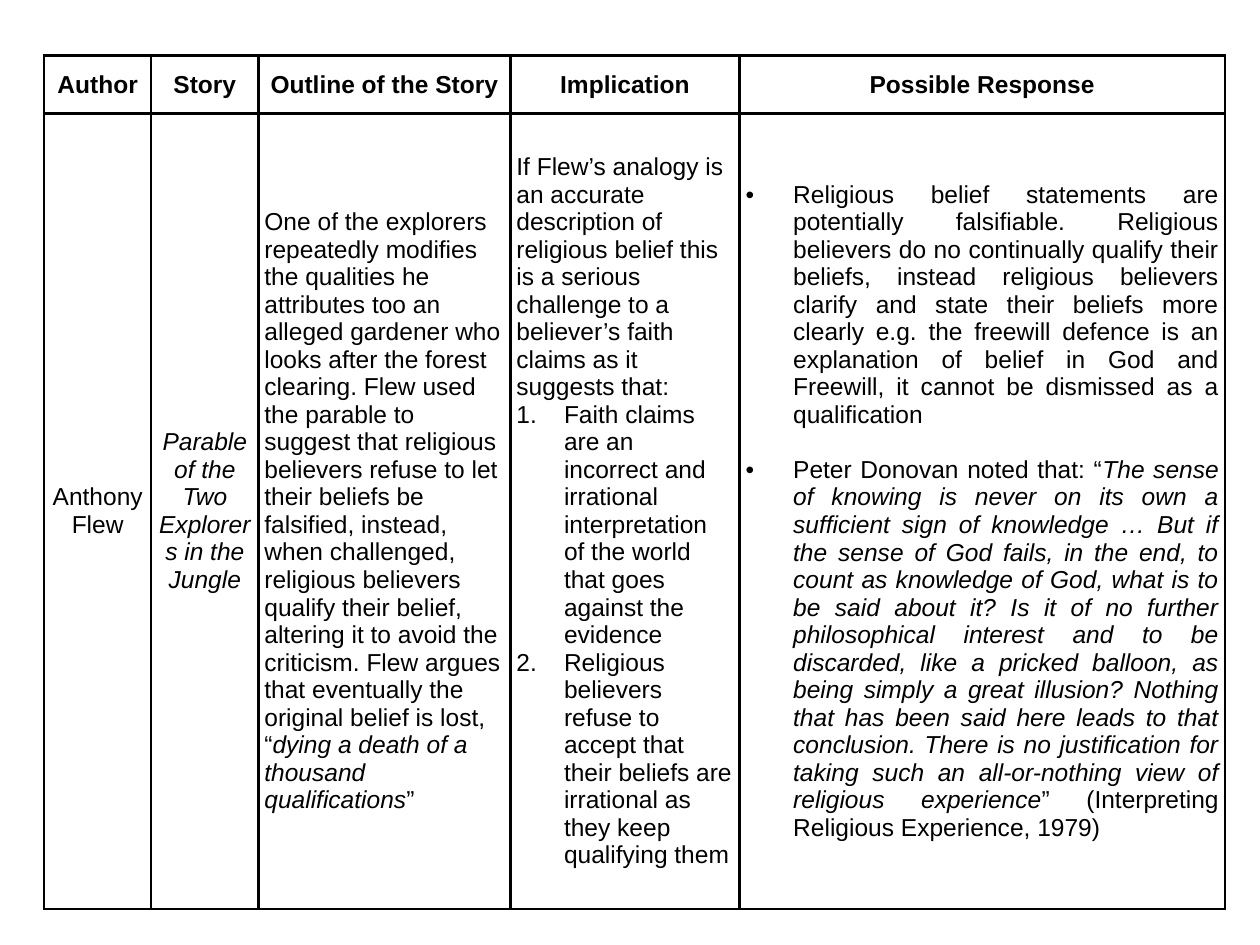
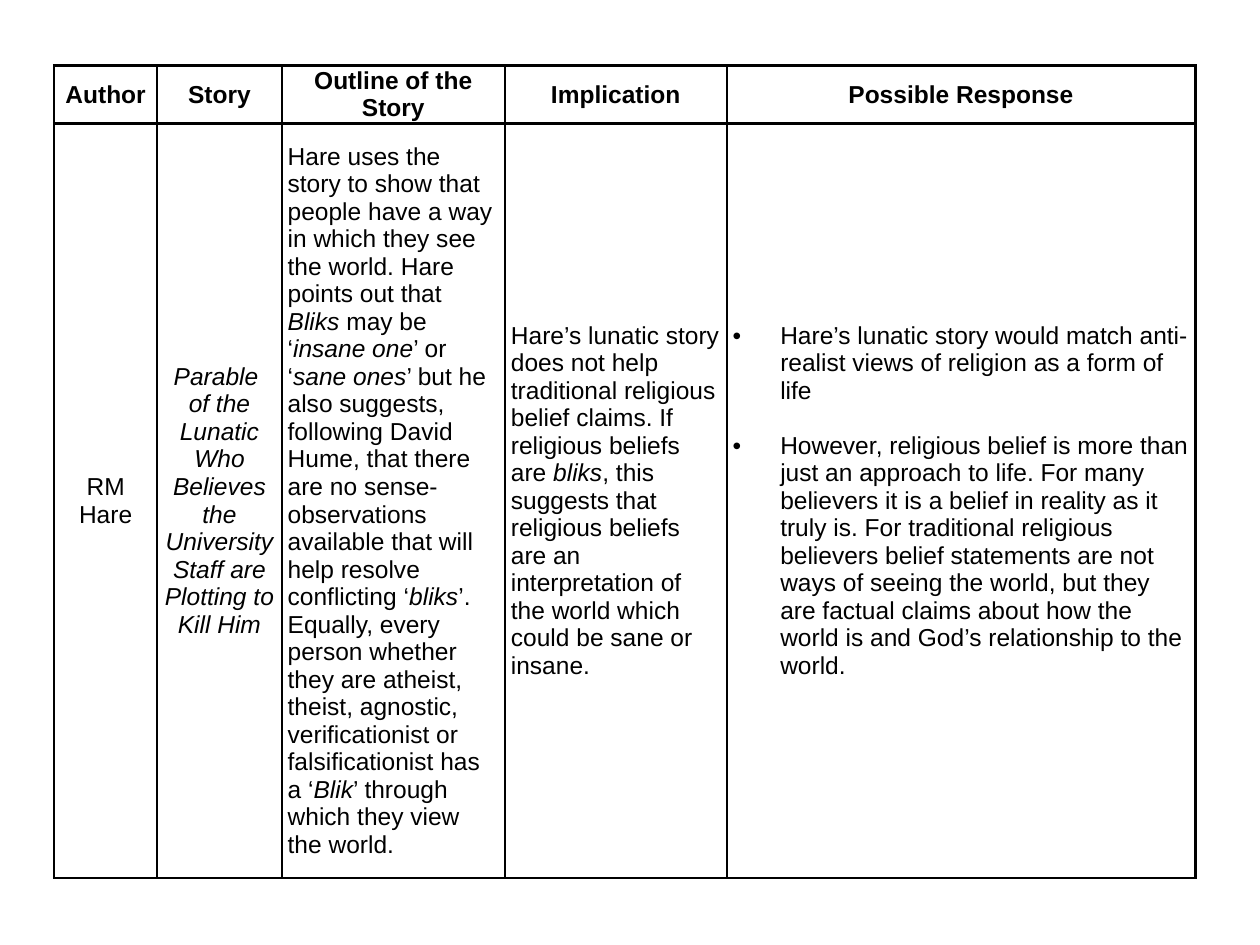
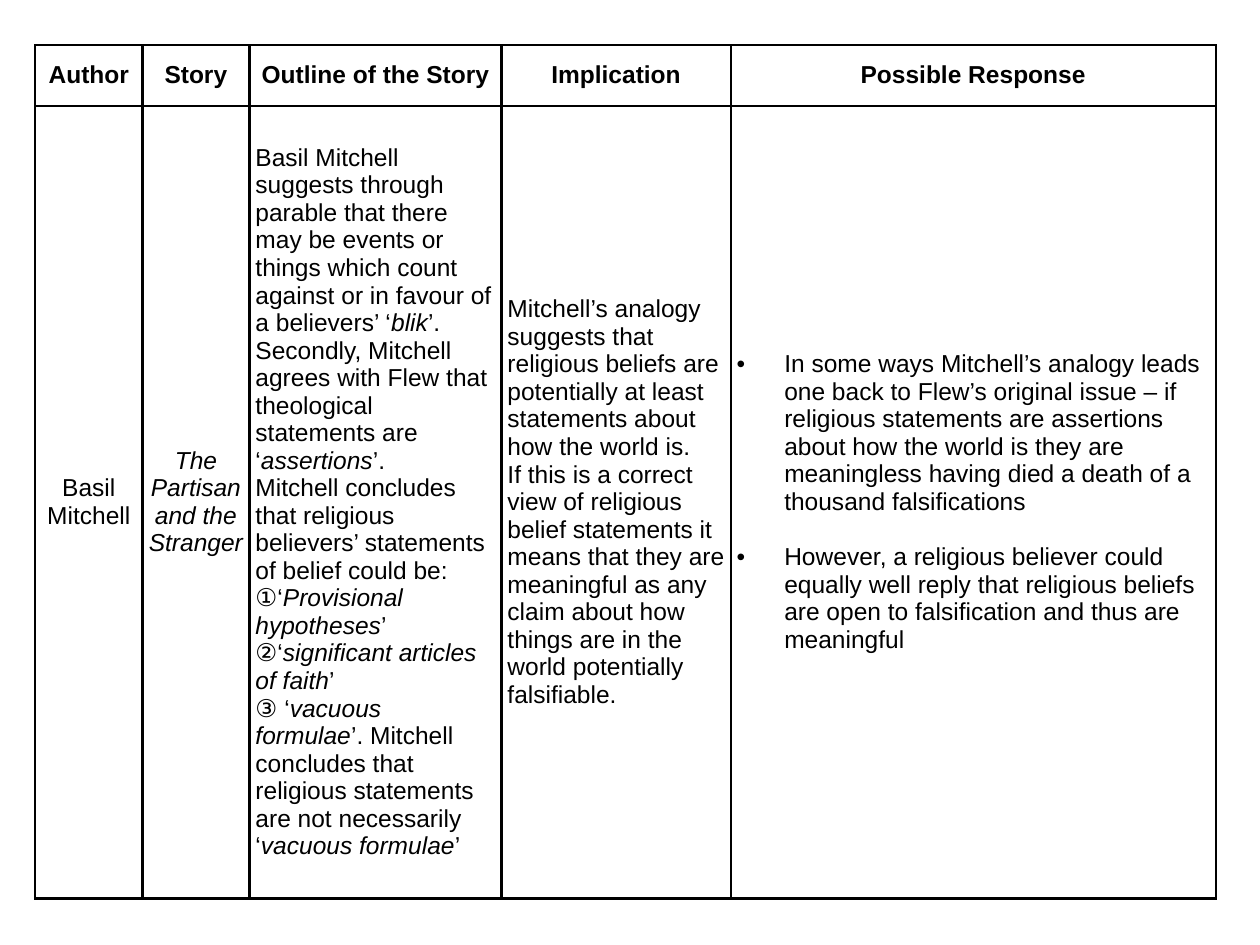
from lxml import etree
from pptx import Presentation
from pptx.dml.color import RGBColor
from pptx.enum import text as t
from pptx.oxml import ns
from pptx.util import Cm, Pt

BLACK = RGBColor(0x00, 0x00, 0x00)
FONT, SIZE = "Arial", Pt(14)
BORDER = Pt(1.5)
INSET = Cm(0.12)
HANGING = Cm(0.96)
ENTRY_GAP = Pt(15.75)
LEFT, CENTER, JUSTIFY = t.PP_ALIGN.LEFT, t.PP_ALIGN.CENTER, t.PP_ALIGN.JUSTIFY

HEADINGS = ["Author", "Story", "Outline of the Story", "Implication", "Possible Response"]
WIDE_COLUMNS = [2.16, 2.16, 5.08, 4.62, 9.78]
NARROW_COLUMNS = [2.08, 2.51, 4.5, 4.47, 9.45]

# Asterisks enclose italics; "1. ", "• ", "① " and "② " open list entries.
PARABLES = [
    dict(
        corner=(0.89, 1.12), columns=WIDE_COLUMNS, rows=(1.17, 16.03), response_align=JUSTIFY,
        author=["Anthony Flew"],
        story=["*Parable of the Two Explorers in the Jungle*"],
        outline=[
            "One of the explorers repeatedly modifies the qualities he attributes too an alleged "
            "gardener who looks after the forest clearing. Flew used the parable to suggest that "
            "religious believers refuse to let their beliefs be falsified, instead, when "
            "challenged, religious believers qualify their belief, altering it to avoid the "
            "criticism. Flew argues that eventually the original belief is lost, “*dying a death "
            "of a thousand qualifications*”"],
        implication=[
            "If Flew’s analogy is an accurate description of religious belief this is a serious "
            "challenge to a believer’s faith claims as it suggests that:",
            "1. Faith claims are an incorrect and irrational interpretation of the world that "
            "goes against the evidence",
            "1. Religious believers refuse to accept that their beliefs are irrational as they "
            "keep qualifying them"],
        response=[
            "• Religious belief statements are potentially falsifiable. Religious believers do no "
            "continually qualify their beliefs, instead religious believers clarify and state "
            "their beliefs more clearly e.g. the freewill defence is an explanation of belief in "
            "God and Freewill, it cannot be dismissed as a qualification",
            "• Peter Donovan noted that: “*The sense of knowing is never on its own a sufficient "
            "sign of knowledge … But if the sense of God fails, in the end, to count as knowledge "
            "of God, what is to be said about it? Is it of no further philosophical interest and "
            "to be discarded, like a pricked balloon, as being simply a great illusion? Nothing "
            "that has been said here leads to that conclusion. There is no justification for "
            "taking such an all-or-nothing view of religious experience*” (Interpreting Religious "
            "Experience, 1979)"]),
    dict(
        corner=(1.09, 1.32), columns=NARROW_COLUMNS, rows=(1.17, 15.21), response_align=LEFT,
        author=["RM Hare"],
        story=[
            "*Parable *",
            "*of the Lunatic Who Believes the University Staff are Plotting to Kill Him*"],
        outline=[
            "Hare uses the story to show that people have a way in which they see the world. Hare "
            "points out that *Bliks* may be ‘*insane one*’ or ‘*sane ones*’ but he also suggests, "
            "following David Hume, that there are no sense-observations available that will help "
            "resolve conflicting ‘*bliks*’. Equally, every person whether they are atheist, "
            "theist, agnostic, verificationist or falsificationist has a ‘*Blik*’ through which "
            "they view the world."],
        implication=[
            "Hare’s lunatic story does not help traditional religious belief claims. If religious "
            "beliefs are *bliks*, this suggests that religious beliefs are an interpretation of "
            "the world which could be sane or insane."],
        response=[
            "• Hare’s lunatic story would match anti-realist views of religion as a form of life",
            "• However, religious belief is more than just an approach to life. For many "
            "believers it is a belief in reality as it truly is. For traditional religious "
            "believers belief statements are not ways of seeing the world, but they are factual "
            "claims about how the world is and God’s relationship to the world."]),
    dict(
        corner=(0.71, 0.91), columns=WIDE_COLUMNS, rows=(1.22, 15.98), response_align=LEFT,
        author=["Basil Mitchell"],
        story=["*The Partisan and the Stranger*"],
        outline=[
            "Basil Mitchell suggests through parable that there may be events or things which "
            "count against or in favour of a believers’ ‘*blik*’. Secondly, Mitchell agrees with "
            "Flew that theological statements are ‘*assertions*’.",
            "Mitchell concludes that religious believers’ statements of belief could be:",
            "① ‘*Provisional hypotheses*’",
            "② ‘*significant articles of faith*’",
            "③ ‘*vacuous formulae*’. Mitchell concludes that religious statements are not "
            "necessarily ‘*vacuous formulae*’"],
        implication=[
            "Mitchell’s analogy suggests that religious beliefs are potentially at least "
            "statements about how the world is.",
            "If this is a correct view of religious belief statements it means that they are "
            "meaningful as any claim about how things are in the world potentially falsifiable."],
        response=[
            "• In some ways Mitchell’s analogy leads one back to Flew’s original issue – if "
            "religious statements are assertions about how the world is they are meaningless "
            "having died a death of a thousand falsifications",
            "• However, a religious believer could equally well reply that religious beliefs are "
            "open to falsification and thus are meaningful"]),
]


def add_child(parent, tag, **attributes):
    return etree.SubElement(parent, ns.qn(tag), {k: str(v) for k, v in attributes.items()})


def mark_entry(paragraph, marker):
    """Give the paragraph its list marker and indent."""
    properties = paragraph._p.get_or_add_pPr()
    indent = HANGING if marker in ("1.", "•") else 0
    properties.set("marL", str(int(indent)))
    properties.set("indent", str(-int(indent)))
    if marker == "1.":
        add_child(properties, "a:buFont", typeface="+mj-lt")
        add_child(properties, "a:buAutoNum", type="arabicPeriod")
    else:
        add_child(properties, "a:buFont", typeface=FONT)
        add_child(properties, "a:buChar", char=marker)


def write(cell, entries, align=LEFT, bold=False, gap=0):
    """Fill a cell with paragraphs, reading list markers and italics."""
    frame = cell.text_frame
    for index, entry in enumerate(entries):
        paragraph = frame.add_paragraph() if index else frame.paragraphs[0]
        paragraph.alignment = align
        paragraph.space_before = gap if index else 0
        marker, _, rest = entry.partition(" ")
        if marker in ("1.", "•", "①", "②"):
            mark_entry(paragraph, marker)
            entry = rest
        for position, words in enumerate(entry.split("*")):
            if words:
                run = paragraph.add_run()
                run.text = words
                font = run.font
                font.name, font.size, font.bold = FONT, SIZE, bold
                font.italic = position % 2 == 1
                font.color.rgb = BLACK


def frame_cell(cell):
    """Set the insets, anchor and four borders of a cell."""
    cell.margin_left = cell.margin_right = INSET
    cell.margin_top = cell.margin_bottom = 0
    cell.vertical_anchor = t.MSO_ANCHOR.MIDDLE
    properties = cell._tc.get_or_add_tcPr()
    for side in ("a:lnL", "a:lnR", "a:lnT", "a:lnB"):
        line = add_child(properties, side, w=int(BORDER))
        add_child(add_child(line, "a:solidFill"), "a:srgbClr", val=BLACK)
    cell.fill.background()


def add_parable(slide, parable):
    """Add the table of one parable to its slide."""
    left, top = parable["corner"]
    columns, rows = parable["columns"], parable["rows"]
    table = slide.shapes.add_table(len(rows), len(columns), Cm(left), Cm(top),
                                   Cm(sum(columns)), Cm(sum(rows))).table
    table.first_row = table.horz_banding = False
    for column, width in zip(table.columns, columns):
        column.width = Cm(width)
    for row, height in zip(table.rows, rows):
        row.height = Cm(height)
    for cell in table.iter_cells():
        frame_cell(cell)
    for index, heading in enumerate(HEADINGS):
        write(table.cell(0, index), [heading], align=CENTER, bold=True)
    write(table.cell(1, 0), parable["author"], align=CENTER)
    write(table.cell(1, 1), parable["story"], align=CENTER)
    write(table.cell(1, 2), parable["outline"])
    write(table.cell(1, 3), parable["implication"])
    write(table.cell(1, 4), parable["response"], align=parable["response_align"], gap=ENTRY_GAP)


def main():
    deck = Presentation()
    deck.slide_width, deck.slide_height = Cm(25.4), Cm(19.05)
    for parable in PARABLES:
        add_parable(deck.slides.add_slide(deck.slide_layouts[6]), parable)
    deck.save("out.pptx")


if __name__ == "__main__":
    main()
